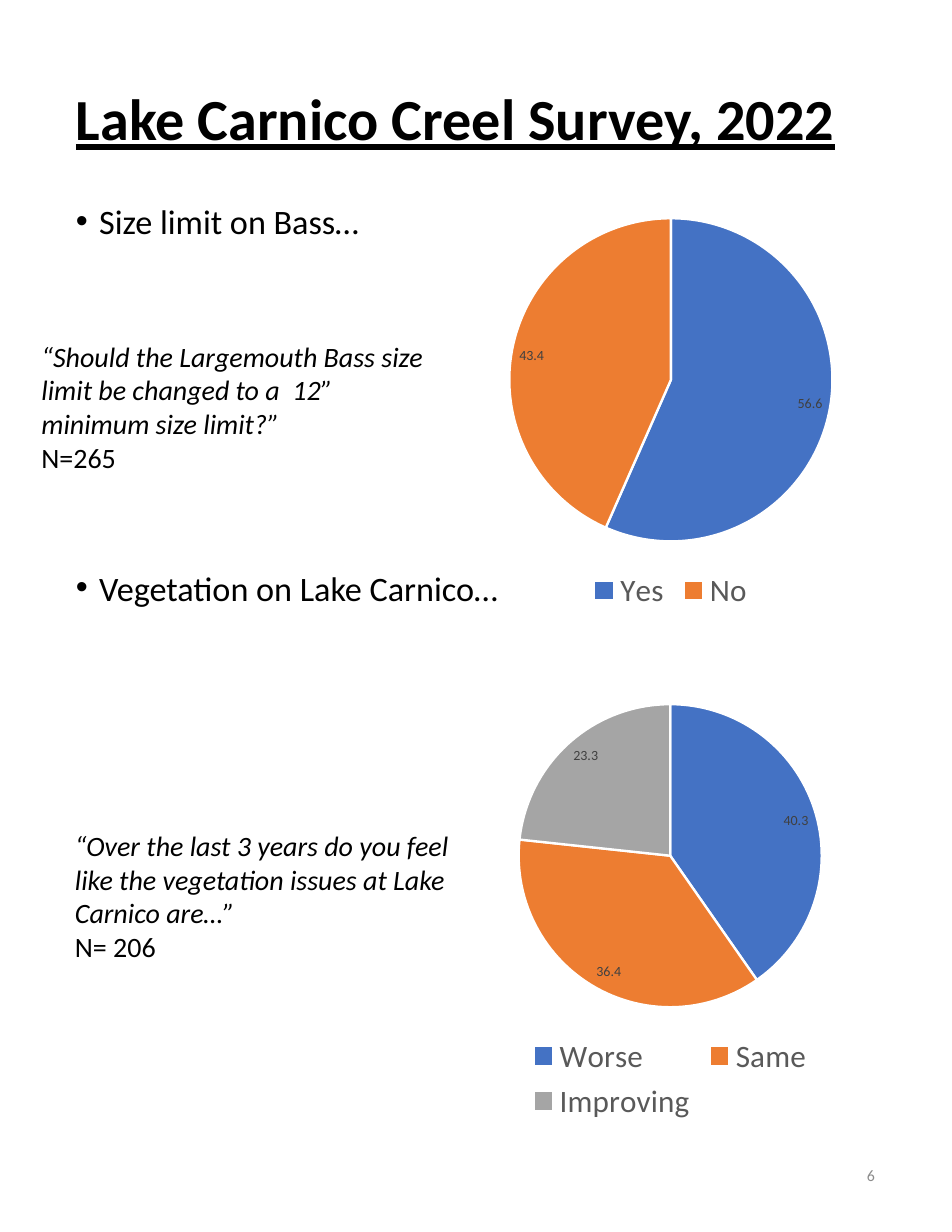
from dataclasses import dataclass

from lxml.etree import SubElement
from pptx import Presentation
from pptx.chart.data import CategoryChartData
from pptx.dml.color import RGBColor
from pptx.enum.chart import XL_CHART_TYPE, XL_LABEL_POSITION, XL_LEGEND_POSITION
from pptx.enum.text import MSO_ANCHOR, PP_ALIGN
from pptx.oxml.ns import qn
from pptx.util import Cm, Pt


@dataclass(frozen=True)
class Theme:
    font: str = "Calibri"
    text: str = "000000"
    legend: str = "595959"
    label: str = "404040"
    muted: str = "8C8C8C"
    edge: str = "FFFFFF"
    slices: tuple = ("4472C4", "ED7D31", "A5A5A5")
    title_pt: float = 37.4
    bullet_pt: float = 22
    question_pt: float = 18
    legend_pt: float = 20
    label_pt: float = 9
    number_pt: float = 10.2


T = Theme()

# Content: boxes are left, top, width, height in cm
TITLE = ("Lake Carnico Creel Survey, 2022", (1.47, 1.5, 18.62, 2.54))
TOPICS_BOX = (1.47, 4.6, 18.62, 18.26)
TOPICS = [  # text, space before in points
    ("Size limit on Bass…", 8.5),
    ("Vegetation on Lake Carnico…", 214.5),
]
SURVEYS = [
    {
        "question": "“Should the Largemouth Bass size limit be changed to a  12” minimum size limit?”",
        "sample": "N=265",
        "text_box": (0.69, 7.57, 9.35, 3.33),
        "answers": [("Yes", 56.6), ("No", 43.4)],
        "chart_box": (10.54, 4.6, 9.35, 9.37),
    },
    {
        "question": "“Over the last 3 years do you feel like the vegetation issues at Lake Carnico are…”",
        "sample": "N= 206",
        "text_box": (1.45, 18.67, 9.35, 3.33),
        "answers": [("Worse", 40.3), ("Same", 36.4), ("Improving", 23.3)],
        "chart_box": (10.03, 15.62, 10.34, 9.93),
    },
]
PAGE_NUMBER = ("6", (15.24, 25.91, 4.85, 1.5))


def style(font, size, color, **flags):
    font.name, font.size = T.font, Pt(size)
    font.color.rgb = RGBColor.from_string(color)
    for name, value in flags.items():
        setattr(font, name, value)


def add_box(s, box, anchor=MSO_ANCHOR.TOP):
    tf = s.shapes.add_textbox(*map(Cm, box)).text_frame
    tf.word_wrap, tf.vertical_anchor = True, anchor
    return tf


def add_run(p, text, size, color=T.text, **flags):
    r = p.add_run()
    r.text = text
    style(r.font, size, color, **flags)


def paragraphs(tf, count):
    return [tf.paragraphs[0]] + [tf.add_paragraph() for _ in range(count - 1)]


def add_bullet(p, indent=Cm(0.53)):
    pPr = p._p.get_or_add_pPr()
    pPr.set("marL", str(indent))
    pPr.set("indent", str(-indent))
    SubElement(pPr, qn("a:buFont")).set("typeface", "Arial")
    SubElement(pPr, qn("a:buChar")).set("char", "•")


def add_pie(s, answers, box):
    data = CategoryChartData()
    names, values = zip(*answers)
    data.categories = names
    data.add_series("Series 1", values)
    chart = s.shapes.add_chart(XL_CHART_TYPE.PIE, *map(Cm, box), data).chart
    style(chart.font, 10, T.text)
    chart.has_title = False
    chart.has_legend = True
    chart.legend.position = XL_LEGEND_POSITION.BOTTOM
    chart.legend.include_in_layout = False
    style(chart.legend.font, T.legend_pt, T.legend)

    plot = chart.plots[0]
    plot.vary_by_categories = True
    plot.has_data_labels = True
    labels = plot.data_labels
    labels.show_value, labels.show_percentage = True, False
    labels.position = XL_LABEL_POSITION.INSIDE_END
    style(labels.font, T.label_pt, T.label)
    for i, color in zip(range(len(answers)), T.slices):
        fmt = plot.series[0].points[i].format
        fmt.fill.solid()
        fmt.fill.fore_color.rgb = RGBColor.from_string(color)
        fmt.line.color.rgb = RGBColor.from_string(T.edge)
        fmt.line.width = Pt(1.5)


def main():
    prs = Presentation()
    prs.slide_width, prs.slide_height = Cm(21.59), Cm(27.94)
    s = prs.slides.add_slide(prs.slide_layouts[6])

    # Title
    text, box = TITLE
    p = add_box(s, box, MSO_ANCHOR.MIDDLE).paragraphs[0]
    p.line_spacing = 0.9
    add_run(p, text, T.title_pt, bold=True, underline=True)

    # Topic bullets
    tf = add_box(s, TOPICS_BOX)
    for p, (text, gap) in zip(paragraphs(tf, len(TOPICS)), TOPICS):
        p.line_spacing, p.space_before = 0.8, Pt(gap)
        add_bullet(p)
        add_run(p, text, T.bullet_pt)

    # Survey questions and their answers
    for survey in SURVEYS:
        asked, sample = paragraphs(add_box(s, survey["text_box"]), 2)
        add_run(asked, survey["question"], T.question_pt, italic=True)
        add_run(sample, survey["sample"], T.question_pt)
        add_pie(s, survey["answers"], survey["chart_box"])

    # Page number
    text, box = PAGE_NUMBER
    p = add_box(s, box, MSO_ANCHOR.MIDDLE).paragraphs[0]
    p.alignment = PP_ALIGN.RIGHT
    add_run(p, text, T.number_pt, T.muted)

    prs.save("out.pptx")


if __name__ == "__main__":
    main()
